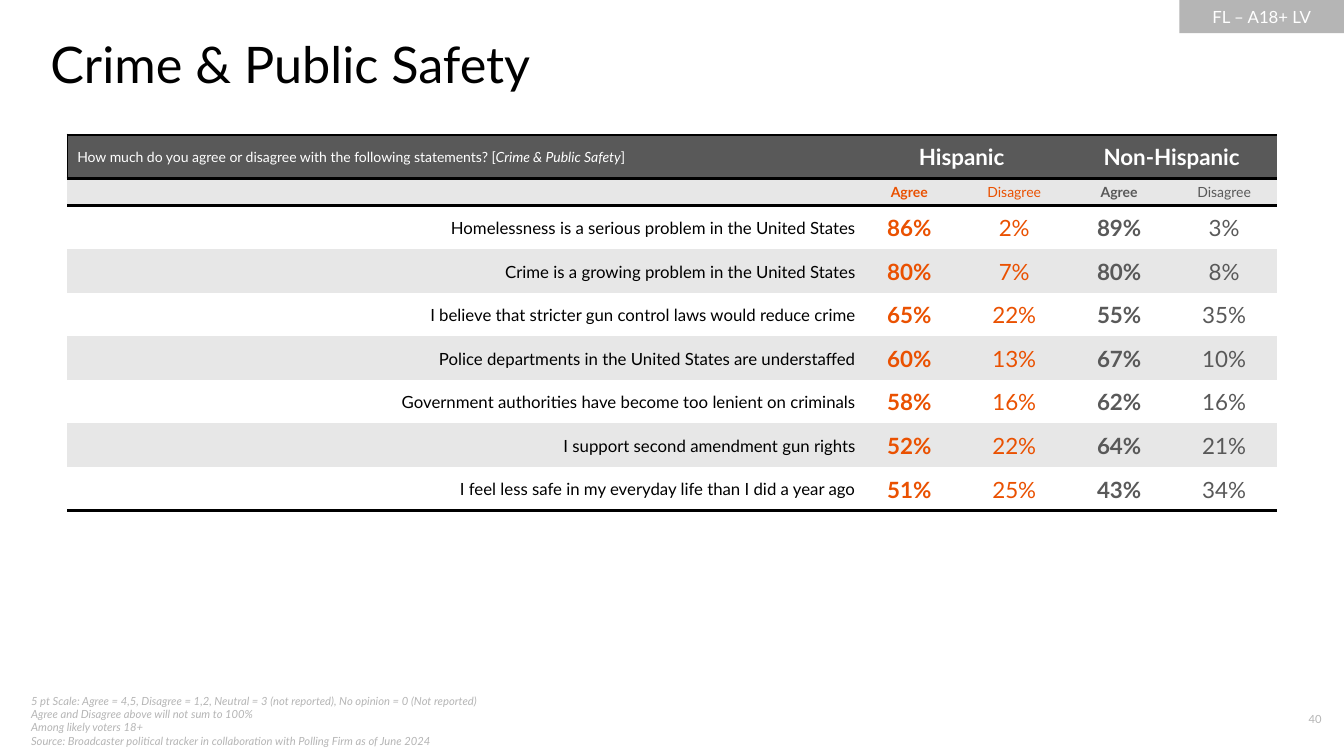
from lxml.etree import SubElement
from pptx import Presentation
from pptx.dml.color import RGBColor
from pptx.enum.shapes import MSO_SHAPE
from pptx.enum.text import MSO_ANCHOR as ANCHOR, MSO_AUTO_SIZE as AUTO_SIZE, PP_ALIGN as ALIGN
from pptx.oxml.ns import qn
from pptx.util import Pt

COLORS = {
    "black": "000000", "white": "FFFFFF", "dark": "595959",
    "band": "E7E7E7", "muted": "B5B5B5", "orange": "EA5101",
}
FONT = "Lato"
NO_GRID_STYLE = "{2D5ABB26-0587-4C30-8999-92F81FD0307C}"
HEADER_HEIGHT, SUBHEADER_HEIGHT = 31.15, 18.6
STATEMENT_WIDTH, VALUE_WIDTH = 564, 75
ANSWER_STYLES = [("orange", True), ("orange", False), ("dark", True), ("dark", False)]
RESULTS = [
    ("Homelessness is a serious problem in the United States", 86, 2, 89, 3),
    ("Crime is a growing problem in the United States", 80, 7, 80, 8),
    ("I believe that stricter gun control laws would reduce crime", 65, 22, 55, 35),
    ("Police departments in the United States are understaffed", 60, 13, 67, 10),
    ("Government authorities have become too lenient on criminals", 58, 16, 62, 16),
    ("I support second amendment gun rights", 52, 22, 64, 21),
    ("I feel less safe in my everyday life than I did a year ago", 51, 25, 43, 34),
]
FOOTNOTES = [
    "5 pt Scale: Agree = 4,5, Disagree = 1,2, Neutral = 3 (not reported), No opinion = 0 (Not reported)",
    "Agree and Disagree above will not sum to 100%",
    "Among likely voters 18+\vSource: Broadcaster political tracker in collaboration with Polling Firm as of June 2024",
]


def rgb(name):
    """Return the named colour."""
    return RGBColor.from_string(COLORS[name])


def style(paragraph, size, color, align=ALIGN.LEFT, bold=False, italic=False):
    """Set the alignment and font of a paragraph."""
    paragraph.alignment = align
    font = paragraph.font
    font.name, font.size, font.bold, font.italic = FONT, Pt(size), bold, italic
    font.color.rgb = rgb(color)


def add_text(slide, box, lines, size, color, align=ALIGN.LEFT, italic=False, anchor=ANCHOR.TOP):
    """Add a text box with one paragraph per line."""
    frame = slide.shapes.add_textbox(*map(Pt, box)).text_frame
    frame.word_wrap = True
    frame.vertical_anchor = anchor
    frame.text = "\n".join(lines)
    for paragraph in frame.paragraphs:
        style(paragraph, size, color, align, italic=italic)


def add_title(slide, text):
    """Fill and place the title placeholder."""
    title = slide.shapes.title
    title.left, title.top, title.width, title.height = map(Pt, (36, 23.76, 864, 43.92))
    frame = title.text_frame
    frame.margin_left = frame.margin_top = frame.margin_right = frame.margin_bottom = 0
    frame.vertical_anchor = ANCHOR.TOP
    frame.auto_size = AUTO_SIZE.SHAPE_TO_FIT_TEXT
    frame.text = text
    style(frame.paragraphs[0], 36, "black")


def add_tag(slide, text):
    """Add the grey audience tag in the top corner."""
    tag = slide.shapes.add_shape(MSO_SHAPE.RECTANGLE, *map(Pt, (842.4, 0, 117.6, 23.76)))
    tag.shadow.inherit = False
    tag.fill.solid()
    tag.fill.fore_color.rgb = rgb("muted")
    tag.line.fill.background()
    tag.text_frame.text = text
    tag.text_frame.vertical_anchor = ANCHOR.MIDDLE
    style(tag.text_frame.paragraphs[0], 12, "white", ALIGN.CENTER)


def format_cell(cell, fill, borders):
    """Set a cell's anchor, black borders and fill."""
    cell.vertical_anchor = ANCHOR.MIDDLE
    properties = cell._tc.get_or_add_tcPr()
    for side in "LRTB":
        if side in borders:
            line = SubElement(properties, qn(f"a:ln{side}"), w=str(Pt(borders[side])))
            solid = SubElement(line, qn("a:solidFill"))
            SubElement(solid, qn("a:srgbClr"), val=COLORS["black"])
    cell.fill.solid()
    cell.fill.fore_color.rgb = rgb(fill)


def write_cell(cell, text, size, color, align=ALIGN.CENTER, bold=False):
    """Write one styled paragraph in a cell."""
    cell.text = text
    style(cell.text_frame.paragraphs[0], size, color, align, bold)


def fill_header(table):
    """Write the question, the group names and the answer names."""
    borders = {"T": 2.25, "B": 2.25}
    for column in range(5):
        edge = {0: {"L": 1}, 4: {"R": 1}}.get(column, {})
        format_cell(table.cell(0, column), "dark", borders | edge)
        format_cell(table.cell(1, column), "band", {"T": 2.25})

    question = table.cell(0, 0).text_frame.paragraphs[0]
    style(question, 10, "white")
    question.add_run().text = "How much do you agree or disagree with the following statements? ["
    topic = question.add_run()
    topic.text = "Crime & Public Safety"
    topic.font.italic = True
    question.add_run().text = "]"

    for column, group in ((1, "Hispanic"), (3, "Non-Hispanic")):
        table.cell(0, column).merge(table.cell(0, column + 1))
        write_cell(table.cell(0, column), group, 16, "white", bold=True)

    blank = table.cell(1, 0).text_frame.paragraphs[0]
    SubElement(blank._p, qn("a:endParaRPr"), sz="1000")
    for column, (color, bold) in enumerate(ANSWER_STYLES, 1):
        answer = "Agree" if bold else "Disagree"
        write_cell(table.cell(1, column), answer, 10, color, bold=bold)


def fill_results(table):
    """Write the statements and their percentages in banded rows."""
    for index, (statement, *values) in enumerate(RESULTS):
        row = index + 2
        borders = {"B": 2.25} if index == len(RESULTS) - 1 else {}
        for column in range(5):
            cell = table.cell(row, column)
            format_cell(cell, "band" if index % 2 else "white", borders)
            cell.margin_left = cell.margin_top = cell.margin_right = Pt(0.75)
            cell.margin_bottom = 0
        write_cell(table.cell(row, 0), statement, 12, "black", ALIGN.RIGHT)
        for column, (value, (color, bold)) in enumerate(zip(values, ANSWER_STYLES), 1):
            write_cell(table.cell(row, column), f"{value}%", 16, color, bold=bold)


def add_results_table(slide):
    """Add the survey table."""
    widths = [STATEMENT_WIDTH] + [VALUE_WIDTH] * 4
    heights = [HEADER_HEIGHT, SUBHEADER_HEIGHT] + [HEADER_HEIGHT] * len(RESULTS)
    box = map(Pt, (48, 96.5, sum(widths), sum(heights)))
    table = slide.shapes.add_table(len(heights), len(widths), *box).table
    table.first_row = table.horz_banding = False
    table._tbl.tblPr.find(qn("a:tableStyleId")).text = NO_GRID_STYLE
    for column, width in zip(table.columns, widths):
        column.width = Pt(width)
    for row, height in zip(table.rows, heights):
        row.height = Pt(height)
    fill_header(table)
    fill_results(table)


def main():
    """Build the slide and save it."""
    presentation = Presentation()
    presentation.slide_width, presentation.slide_height = Pt(960), Pt(540)
    slide = presentation.slides.add_slide(presentation.slide_layouts[5])
    add_text(slide, (15.12, 500.4, 367.92, 28.8), FOOTNOTES, 8, "muted",
             italic=True, anchor=ANCHOR.MIDDLE)
    add_text(slide, (887.76, 505.44, 63.36, 19.44), ["40"], 8, "muted", ALIGN.RIGHT)
    add_tag(slide, "FL – A18+ LV")
    add_title(slide, "Crime & Public Safety")
    add_results_table(slide)
    presentation.save("out.pptx")


if __name__ == "__main__":
    main()
